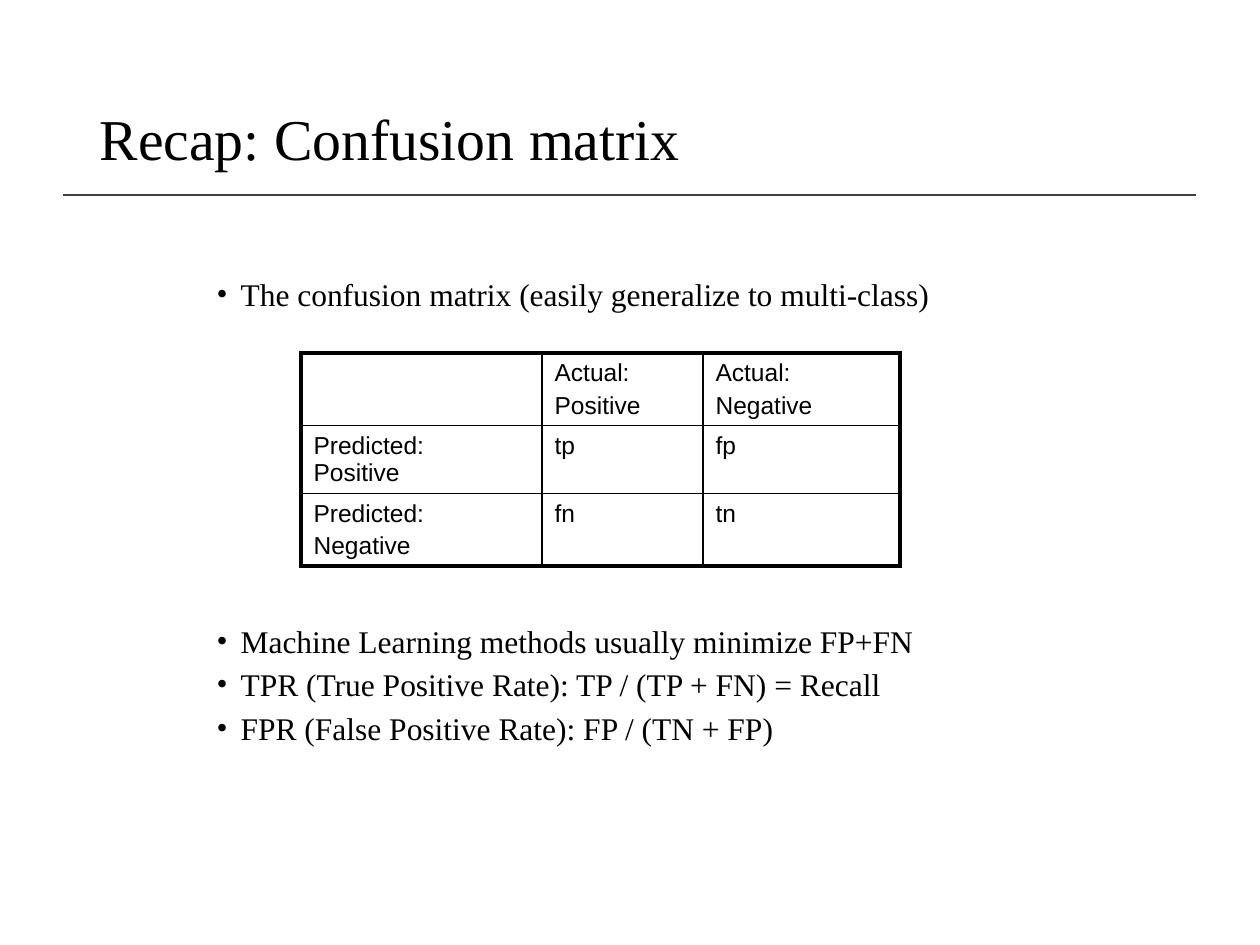
import dataclasses
import typing

import pptx
import pptx.dml.color
import pptx.enum.shapes
import pptx.enum.text
import pptx.oxml
import pptx.oxml.ns
import pptx.util

EMU_PER_PX = 914400 // 126


@dataclasses.dataclass(frozen=True)
class Theme:
    ink: str = "000000"
    rule: str = "404040"
    serif: str = "Times New Roman"
    sans: str = "Arial"
    title_pt: int = 33
    body_pt: int = 18
    cell_pt: int = 14
    thin_pt: float = 1
    thick_pt: float = 2.25


class Box(typing.NamedTuple):
    left: int
    top: int
    width: int
    height: int


class Bullet(typing.NamedTuple):
    text: str
    space_pt: float = 7.5


THEME = Theme()
TITLE_BOX = Box(87, 50, 1086, 183)
BODY_BOX = Box(204, 276, 858, 496)
MATRIX_LEFT, MATRIX_TOP = 301, 353
COLUMN_WIDTHS = (241, 161, 197)
ROW_HEIGHTS = (72, 68, 72)
BULLET_INDENT = 24

# The second bullet leaves room for the matrix above it.
BULLETS = (
    Bullet("The confusion matrix (easily generalize to multi-class)"),
    Bullet("Machine Learning methods usually minimize FP+FN", 181),
    Bullet("TPR (True Positive Rate): TP / (TP + FN) = Recall"),
    Bullet("FPR (False Positive Rate): FP / (TN + FP)"),
)
MATRIX = (
    ("", "Actual:\nPositive", "Actual:\nNegative"),
    ("Predicted: \vPositive", "tp", "fp"),
    ("Predicted:\nNegative", "fn", "tn"),
)


def px(length: int) -> pptx.util.Emu:
    return pptx.util.Emu(length * EMU_PER_PX)


def apply(target: typing.Any, values: dict[str, typing.Any]) -> None:
    """Set every named attribute on the target."""
    for name, value in values.items():
        setattr(target, name, value)


def place(shape: typing.Any, box: Box) -> None:
    apply(shape, {side: px(length) for side, length in box._asdict().items()})


def format_font(font: typing.Any, face: str, size_pt: int) -> None:
    apply(font, {"name": face, "size": pptx.util.Pt(size_pt), "bold": False})
    font.color.rgb = pptx.dml.color.RGBColor.from_string(THEME.ink)


def format_frame(frame: typing.Any, anchor: typing.Any) -> None:
    apply(frame, {
        "word_wrap": True,
        "auto_size": pptx.enum.text.MSO_AUTO_SIZE.NONE,
        "vertical_anchor": anchor,
    })


def format_paragraph(paragraph: typing.Any, line_spacing: float, space_pt: float) -> None:
    apply(paragraph, {
        "alignment": pptx.enum.text.PP_ALIGN.LEFT,
        "line_spacing": line_spacing,
        "space_before": pptx.util.Pt(space_pt),
    })


def add_bullet_mark(paragraph: typing.Any) -> None:
    properties = paragraph._p.get_or_add_pPr()
    properties.set("marL", str(px(BULLET_INDENT)))
    properties.set("indent", str(-px(BULLET_INDENT)))
    namespace = pptx.oxml.ns.nsdecls("a")
    for mark in (f'<a:buFont {namespace} typeface="{THEME.serif}"/>',
                 f'<a:buChar {namespace} char="•"/>'):
        properties.append(pptx.oxml.parse_xml(mark))


def fill_title(title: typing.Any) -> None:
    place(title, TITLE_BOX)
    format_frame(title.text_frame, pptx.enum.text.MSO_ANCHOR.MIDDLE)
    heading = title.text_frame.paragraphs[0]
    format_paragraph(heading, 0.9, 0)
    run = heading.add_run()
    run.text = "Recap: Confusion matrix"
    format_font(run.font, THEME.serif, THEME.title_pt)


def fill_body(body: typing.Any) -> None:
    place(body, BODY_BOX)
    frame = body.text_frame
    format_frame(frame, pptx.enum.text.MSO_ANCHOR.TOP)
    frame.text = "\n".join(bullet.text for bullet in BULLETS)
    for paragraph, bullet in zip(frame.paragraphs, BULLETS):
        format_paragraph(paragraph, 0.8, bullet.space_pt)
        add_bullet_mark(paragraph)
        format_font(paragraph.runs[0].font, THEME.serif, THEME.body_pt)


def add_title_rule(slide: typing.Any) -> None:
    rule = slide.shapes.add_connector(
        pptx.enum.shapes.MSO_CONNECTOR.STRAIGHT, px(63), px(195), px(1196), px(195))
    rule.line.color.rgb = pptx.dml.color.RGBColor.from_string(THEME.rule)
    rule.line.width = pptx.util.Pt(THEME.thin_pt)
    rule._element.spPr.append(
        pptx.oxml.parse_xml(f'<a:effectLst {pptx.oxml.ns.nsdecls("a")}/>'))


def add_borders(cell: typing.Any, row: int, column: int) -> None:
    """Draw a thick line on the outside of the matrix and thin lines within."""
    outer_sides = {
        "L": column == 0,
        "R": column == len(COLUMN_WIDTHS) - 1,
        "T": row == 0,
        "B": row == len(ROW_HEIGHTS) - 1,
    }
    properties = cell._tc.get_or_add_tcPr()
    for side, is_outer in outer_sides.items():
        width = pptx.util.Pt(THEME.thick_pt if is_outer else THEME.thin_pt)
        properties.append(pptx.oxml.parse_xml(
            f'<a:ln{side} {pptx.oxml.ns.nsdecls("a")} w="{width}">'
            f'<a:solidFill><a:srgbClr val="{THEME.ink}"/></a:solidFill></a:ln{side}>'))


def add_matrix(slide: typing.Any) -> None:
    table = slide.shapes.add_table(
        len(ROW_HEIGHTS), len(COLUMN_WIDTHS), px(MATRIX_LEFT), px(MATRIX_TOP),
        px(sum(COLUMN_WIDTHS)), px(sum(ROW_HEIGHTS))).table
    apply(table, {"first_row": False, "horz_banding": False})
    for column, width in zip(table.columns, COLUMN_WIDTHS):
        column.width = px(width)
    for row, height in zip(table.rows, ROW_HEIGHTS):
        row.height = px(height)
    for row, labels in enumerate(MATRIX):
        for column, label in enumerate(labels):
            cell = table.cell(row, column)
            add_borders(cell, row, column)
            cell.fill.background()
            cell.text_frame.text = label
            for paragraph in cell.text_frame.paragraphs:
                format_paragraph(paragraph, 1.0, 0.2 * THEME.cell_pt)
                for run in paragraph.runs:
                    format_font(run.font, THEME.sans, THEME.cell_pt)


def main() -> None:
    presentation = pptx.Presentation()
    apply(presentation, {"slide_width": px(1260), "slide_height": px(945)})
    slide = presentation.slides.add_slide(presentation.slide_layouts[1])
    add_title_rule(slide)
    fill_title(slide.shapes.title)
    fill_body(slide.placeholders[1])
    add_matrix(slide)
    presentation.save("out.pptx")


if __name__ == "__main__":
    main()
